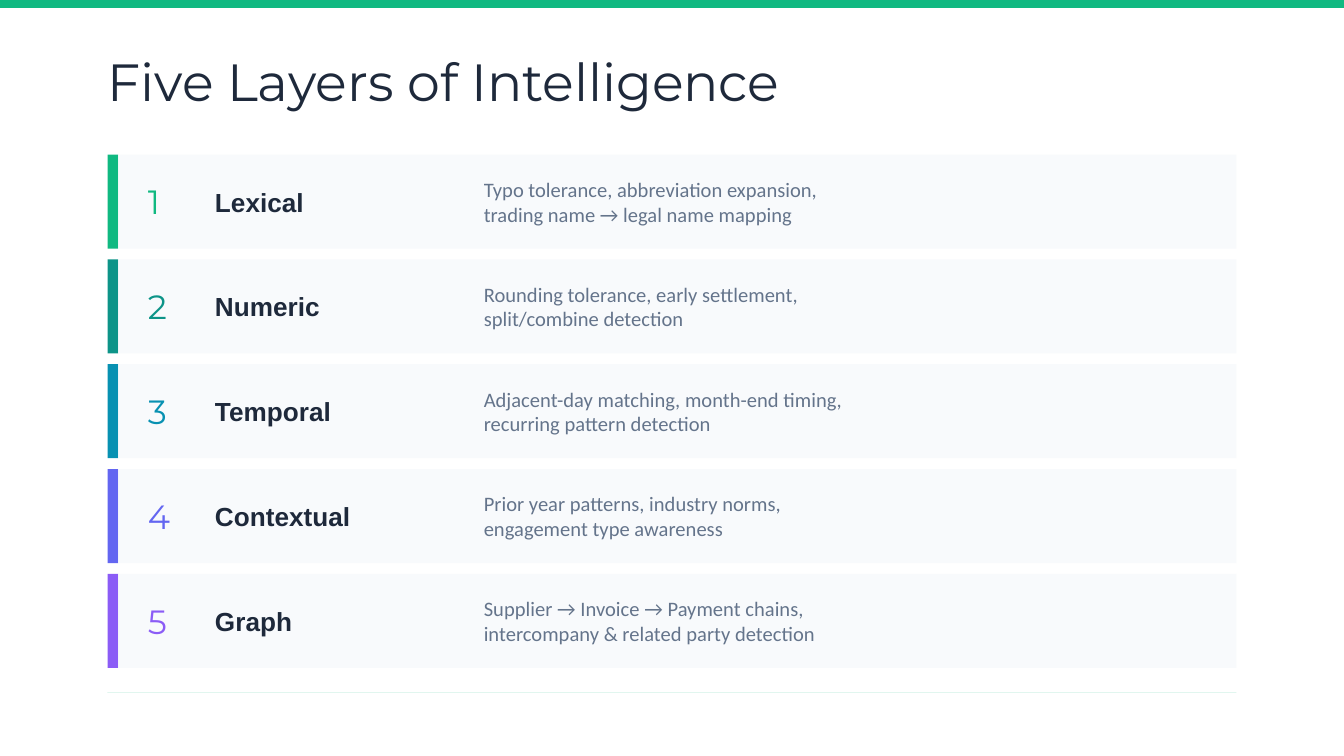
from pptx import Presentation
from pptx.dml.color import RGBColor
from pptx.enum.shapes import MSO_SHAPE
from pptx.enum.text import MSO_ANCHOR, MSO_AUTO_SIZE, PP_ALIGN
from pptx.util import Inches, Pt

RECT = MSO_SHAPE.RECTANGLE
MIDDLE = MSO_ANCHOR.MIDDLE
FIXED = MSO_AUTO_SIZE.NONE
LEFT = PP_ALIGN.LEFT

GREEN = RGBColor(0x10, 0xB9, 0x81)
TEAL = RGBColor(0x0D, 0x94, 0x88)
CYAN = RGBColor(0x08, 0x91, 0xB2)
INDIGO = RGBColor(0x63, 0x66, 0xF1)
VIOLET = RGBColor(0x8B, 0x5C, 0xF6)
INK = RGBColor(0x1E, 0x29, 0x3B)
SLATE = RGBColor(0x64, 0x74, 0x8B)
PALE = RGBColor(0xF8, 0xFA, 0xFC)

TITLE = "Five Layers of Intelligence"
LAYERS = [
    ("Lexical", GREEN,
     ["Typo tolerance, abbreviation expansion,", "trading name → legal name mapping"]),
    ("Numeric", TEAL,
     ["Rounding tolerance, early settlement,", "split/combine detection"]),
    ("Temporal", CYAN,
     ["Adjacent-day matching, month-end timing,", "recurring pattern detection"]),
    ("Contextual", INDIGO,
     ["Prior year patterns, industry norms,", "engagement type awareness"]),
    ("Graph", VIOLET,
     ["Supplier → Invoice → Payment chains,", "intercompany & related party detection"]),
]

WIDE = 10
HIGH = WIDE * 9 / 16
EDGE = 0.8
SPAN = WIDE - 2 * EDGE
BAR = 0.08
TOP, ROW, GAP = 1.15, 0.7, 0.08
HAIR = 0.1 / 72  # a tenth of a point
# Left and width of each text column
NUM, NAME, NOTE = (1.1, 0.4), (1.6, 1.8), (3.6, 5.4)

prs = Presentation()
prs.slide_width, prs.slide_height = Inches(WIDE), Inches(HIGH)
slide = prs.slides.add_slide(prs.slide_layouts[5])
shapes = slide.shapes


def add_rect(x, y, w, h, color):
    box = shapes.add_shape(RECT, Inches(x), Inches(y), Inches(w), Inches(h))
    box.shadow.inherit = False
    box.fill.solid()
    box.fill.fore_color.rgb = color
    box.line.fill.background()


def add_text(lines, x, y, w, h, *, font, size, color, bold=False, box=None):
    """Write one paragraph per line, in a new text box unless one is given."""
    place = [Inches(v) for v in (x, y, w, h)]
    if box is None:
        box = shapes.add_textbox(*place)
    box.left, box.top, box.width, box.height = place
    frame = box.text_frame
    frame.word_wrap = True
    frame.auto_size = FIXED
    frame.vertical_anchor = MIDDLE
    frame.margin_left = frame.margin_right = 0
    frame.margin_top = frame.margin_bottom = 0
    frame.text = "\n".join(lines)
    for para in frame.paragraphs:
        para.alignment = LEFT
        for run in para.runs:
            run.font.name, run.font.size = font, Pt(size)
            run.font.bold, run.font.color.rgb = bold, color


add_rect(0, 0, WIDE, 0.06, GREEN)
add_text([TITLE], EDGE, 0.3, 8, 0.6, font="Montserrat", size=28, color=INK,
         box=shapes.title)

for i, (name, color, note) in enumerate(LAYERS):
    y = TOP + i * (ROW + GAP)
    add_rect(EDGE, y, BAR, ROW, color)
    add_rect(EDGE + BAR, y, SPAN - BAR, ROW, PALE)
    add_text([str(i + 1)], NUM[0], y, NUM[1], ROW,
             font="Montserrat", size=18, color=color)
    add_text([name], NAME[0], y, NAME[1], ROW,
             font="Arial", size=14, color=INK, bold=True)
    add_text(note, NOTE[0], y, NOTE[1], ROW,
             font="Calibri", size=11, color=SLATE)

add_rect(EDGE, 5.15, SPAN, HAIR, GREEN)

prs.save("out.pptx")
